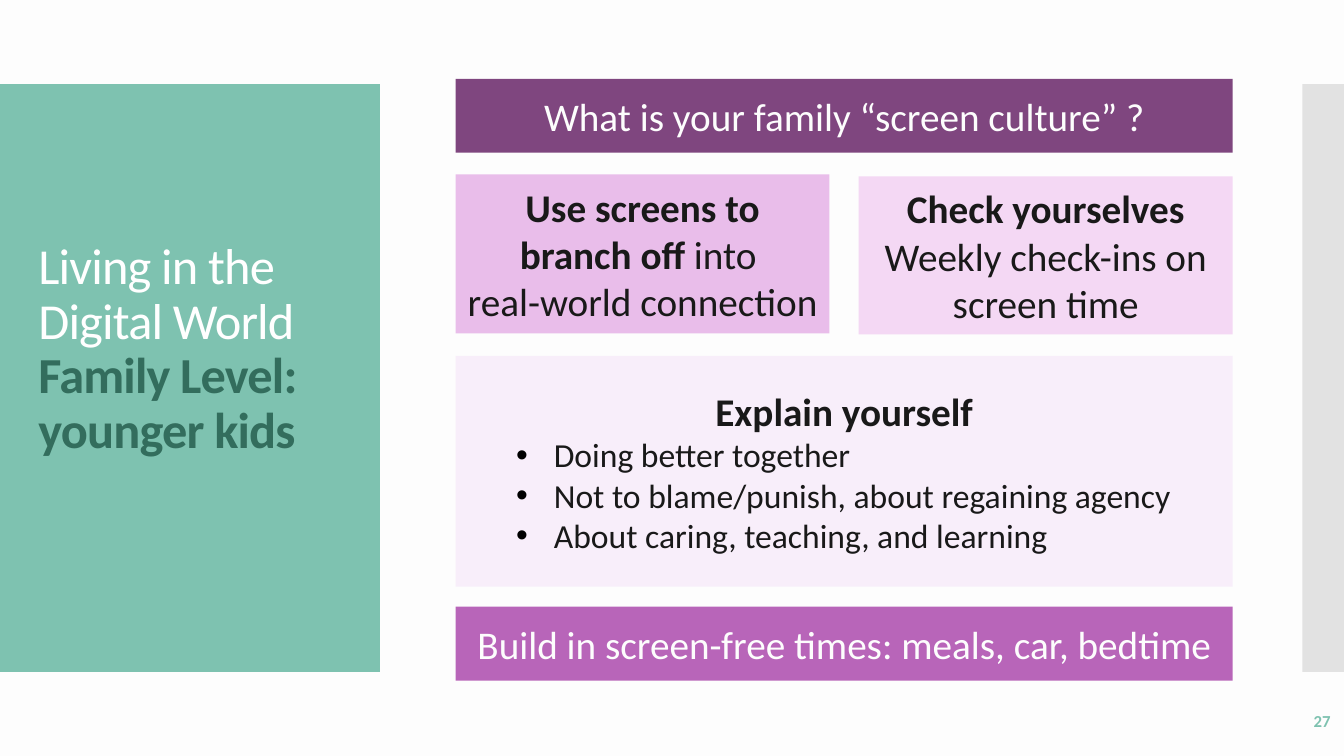
from lxml.etree import SubElement
from pptx import Presentation
from pptx.dml.color import RGBColor
from pptx.enum.shapes import MSO_SHAPE
from pptx.enum.text import MSO_ANCHOR, MSO_AUTO_SIZE, PP_ALIGN
from pptx.oxml.ns import qn
from pptx.util import Pt

COLORS = {
    "background": "FDFDFD",
    "green": "7EC2B0",
    "dark green": "336D5D",
    "gray": "C8C8C8",
    "white": "FFFFFF",
    "ink": "191919",
    "bullet": "000000",
    "deep purple": "7F467F",
    "purple": "B865B9",
    "pink": "E9BDEA",
    "light pink": "F4D8F4",
    "pale pink": "F8EEFA",
}
FONT = "Calibri"
CARDS_LEFT, CARDS_WIDTH = 325.4, 555.1
HALF_WIDTH = 267.1
PANEL_TOP, PANEL_HEIGHT = 60, 420


def color(name):
    return RGBColor.from_string(COLORS[name])


def place(shape, left, top, width, height):
    shape.left, shape.top = Pt(left), Pt(top)
    shape.width, shape.height = Pt(width), Pt(height)


def add_run(paragraph, text, size, color_name, bold=False):
    run = paragraph.add_run()
    run.text = text
    run.font.name = FONT
    run.font.size = Pt(size)
    run.font.bold = bold
    run.font.color.rgb = color(color_name)
    return run


def prepare_frame(shape):
    frame = shape.text_frame
    frame.word_wrap = True
    frame.auto_size = MSO_AUTO_SIZE.NONE
    frame.vertical_anchor = MSO_ANCHOR.MIDDLE
    return frame


def add_rectangle(slide, left, top, width, height, fill):
    shape = slide.shapes.add_shape(
        MSO_SHAPE.RECTANGLE, Pt(left), Pt(top), Pt(width), Pt(height))
    shape.shadow.inherit = False
    shape.fill.solid()
    shape.fill.fore_color.rgb = color(fill)
    shape.line.fill.background()
    return shape


def add_card(slide, box, fill, text_color, paragraphs):
    """Each paragraph is a list of (text, bold) runs; None is a line break."""
    frame = prepare_frame(add_rectangle(slide, *box, fill))
    for index, runs in enumerate(paragraphs):
        paragraph = frame.add_paragraph() if index else frame.paragraphs[0]
        paragraph.alignment = PP_ALIGN.CENTER
        for run in runs:
            if run is None:
                paragraph.add_line_break()
            else:
                add_run(paragraph, run[0], 28, text_color, run[1])


def set_bullet(paragraph, character=None, left=0, indent=0):
    properties = paragraph._p.get_or_add_pPr()
    properties.set("marL", str(Pt(left)))
    properties.set("indent", str(Pt(indent)))
    if character is None:
        SubElement(properties, qn("a:buNone"))
        return
    bullet_color = SubElement(properties, qn("a:buClr"))
    SubElement(bullet_color, qn("a:srgbClr"), val=COLORS["bullet"])
    SubElement(properties, qn("a:buFont"), typeface="Arial")
    SubElement(properties, qn("a:buChar"), char=character)


def add_side_panels(slide):
    add_rectangle(slide, 0, PANEL_TOP, 271.4, PANEL_HEIGHT, "green")
    strip = add_rectangle(slide, 930.2, PANEL_TOP, 29.8, PANEL_HEIGHT, "gray")
    strip_color = strip._element.spPr.find(qn("a:solidFill")).find(qn("a:srgbClr"))
    SubElement(strip_color, qn("a:alpha"), val="50000")


def fill_title(slide):
    title = slide.shapes.title
    slide.shapes._spTree.append(title._element)  # in front of the green panel
    place(title, 20.2, 88.6, 231.8, 362.2)
    frame = prepare_frame(title)
    frame.margin_bottom = Pt(43)
    paragraph = frame.paragraphs[0]
    paragraph.alignment = PP_ALIGN.LEFT
    paragraph.line_spacing = 0.9
    lines = [
        ("Living in the", "white", False),
        ("Digital World", "white", False),
        ("Family Level: younger kids", "dark green", True),
    ]
    for index, (text, color_name, bold) in enumerate(lines):
        if index:
            paragraph.add_line_break()
        run = add_run(paragraph, text, 36, color_name, bold)
        run._r.get_or_add_rPr().set("spc", "-60")


def fill_list(slide, heading, items):
    body = slide.placeholders[1]
    place(body, CARDS_LEFT, 254.2, CARDS_WIDTH, 164.9)
    body.fill.solid()
    body.fill.fore_color.rgb = color("pale pink")
    frame = prepare_frame(body)
    paragraph = frame.paragraphs[0]
    paragraph.alignment = PP_ALIGN.CENTER
    paragraph.space_before = Pt(0)
    set_bullet(paragraph)
    add_run(paragraph, heading, 28, "ink", True)
    for item in items:
        paragraph = frame.add_paragraph()
        paragraph.level = 1
        paragraph.alignment = PP_ALIGN.LEFT
        paragraph.space_before = Pt(0)
        set_bullet(paragraph, "•", 63, -27)
        add_run(paragraph, item, 24, "ink")


def add_page_number(slide, number):
    box = slide.shapes.add_textbox(Pt(837.4), Pt(500.4), Pt(120.2), Pt(28.8))
    paragraph = prepare_frame(box).paragraphs[0]
    paragraph.alignment = PP_ALIGN.RIGHT
    add_run(paragraph, number, 12, "green", True)


def main():
    presentation = Presentation()
    presentation.slide_width, presentation.slide_height = Pt(960), Pt(540)
    slide = presentation.slides.add_slide(presentation.slide_layouts[1])
    slide.background.fill.solid()
    slide.background.fill.fore_color.rgb = color("background")

    # Side panels and title
    add_side_panels(slide)
    fill_title(slide)

    # Question banner
    add_card(slide, (CARDS_LEFT, 56.3, CARDS_WIDTH, 52.8), "deep purple",
             "background", [[("What is your family “screen culture” ?", False)]])

    # Two half-width cards
    add_card(slide, (CARDS_LEFT, 124.6, HALF_WIDTH, 113.6), "pink", "ink",
             [[("Use screens to branch off ", True), ("into ", False), None,
               ("real-world connection", False)]])
    right_left = CARDS_LEFT + CARDS_WIDTH - HALF_WIDTH
    add_card(slide, (right_left, 126, HALF_WIDTH, 112.8), "light pink", "ink",
             [[("Check yourselves", True)],
              [("Weekly check-ins on screen time", False)]])

    # List card
    fill_list(slide, "Explain yourself", [
        "Doing better together",
        "Not to blame/punish, about regaining agency",
        "About caring, teaching, and learning",
    ])

    # Closing banner and page number
    add_card(slide, (CARDS_LEFT, 433.3, CARDS_WIDTH, 52.8), "purple", "background",
             [[("Build in screen-free times: meals, car, bedtime", False)]])
    add_page_number(slide, "27")

    presentation.save("out.pptx")


if __name__ == "__main__":
    main()
